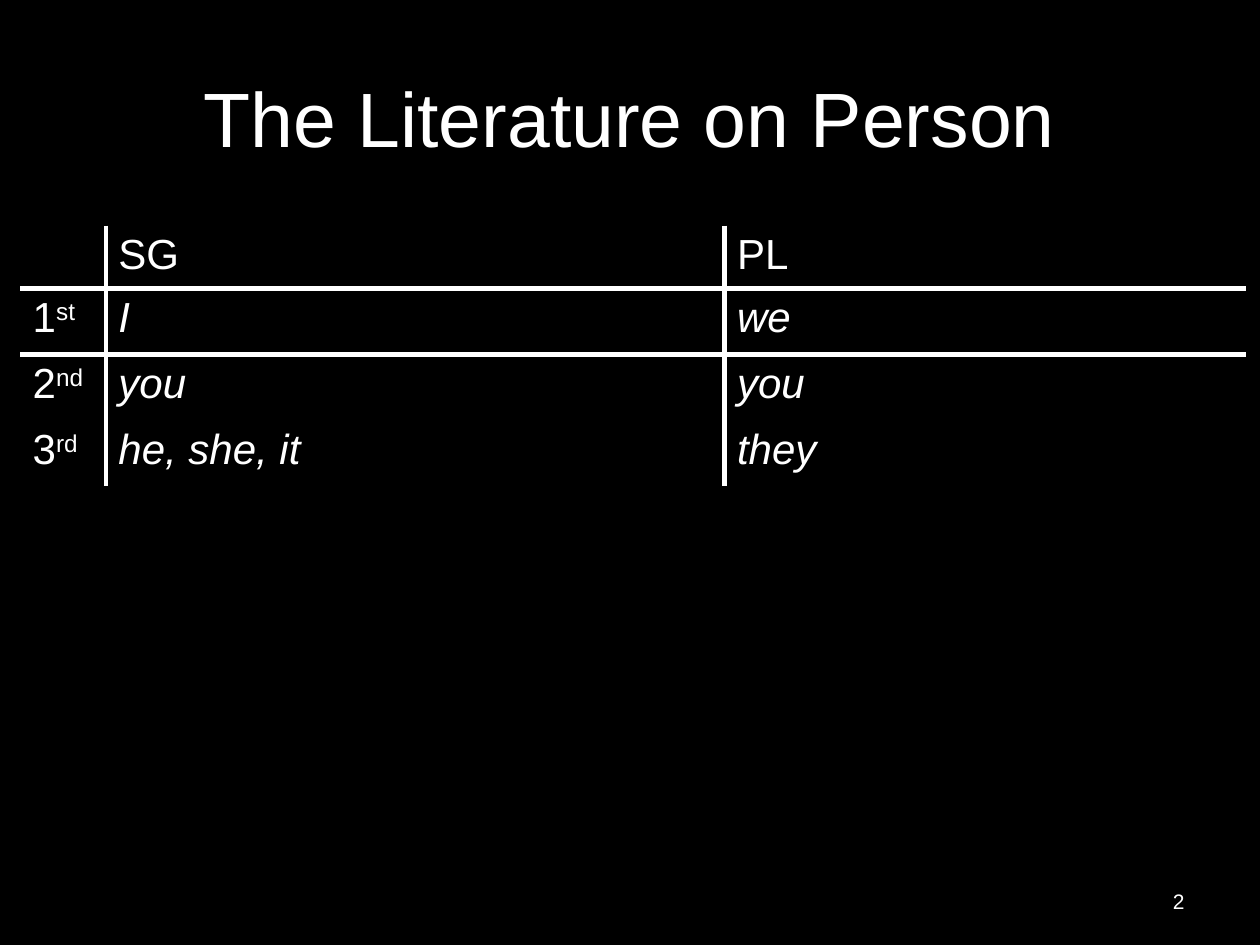
from dataclasses import dataclass

from lxml import etree
from pptx import Presentation
from pptx.dml.color import RGBColor
from pptx.enum.text import MSO_ANCHOR, PP_ALIGN
from pptx.oxml.ns import qn
from pptx.util import Pt

CENTER, RIGHT, MIDDLE = PP_ALIGN.CENTER, PP_ALIGN.RIGHT, MSO_ANCHOR.MIDDLE


@dataclass(frozen=True)
class Theme:
    font: str = "Arial"
    ink: str = "FFFFFF"
    paper: str = "000000"
    title: int = 44
    body: int = 24
    small: int = 12
    rule: int = 3


class Deck:
    def __init__(self, prs, theme):
        self.theme = theme
        self.s = prs.slides.add_slide(prs.slide_layouts[6])
        fill = self.s.background.fill
        fill.solid()
        fill.fore_color.rgb = RGBColor.from_string(theme.paper)

    def style(self, r, size, italic=False):
        r.font.name = self.theme.font
        r.font.size = Pt(size)
        r.font.italic = italic
        r.font.color.rgb = RGBColor.from_string(self.theme.ink)

    def text(self, text, box, size, align):
        tf = self.s.shapes.add_textbox(*map(Pt, box)).text_frame
        tf.word_wrap = True
        tf.vertical_anchor = MIDDLE
        tf.text = text
        p = tf.paragraphs[0]
        p.alignment = align
        self.style(p.runs[0], size)

    def border(self, cell, side, shown):
        ln = etree.SubElement(cell._tc.get_or_add_tcPr(), qn(f"a:ln{side}"))
        if shown:
            ln.set("w", str(Pt(self.theme.rule)))
            fill = etree.SubElement(ln, qn("a:solidFill"))
            etree.SubElement(fill, qn("a:srgbClr"), val=self.theme.ink)
        else:
            etree.SubElement(ln, qn("a:noFill"))

    def cell_text(self, cell, text, suffix="", italic=False):
        cell.text = text
        p = cell.text_frame.paragraphs[0]
        self.style(p.runs[0], self.theme.body, italic)
        if suffix:
            r = p.add_run()
            r.text = suffix
            self.style(r, self.theme.body)
            r.font._element.set("baseline", "30000")

    def table(self, left, top, widths, heights, v_rules, h_rules):
        """Add an unfilled table ruled after the given columns and rows."""
        table = self.s.shapes.add_table(
            len(heights), len(widths), Pt(left), Pt(top),
            Pt(sum(widths)), Pt(sum(heights))).table
        table.first_row = table.horz_banding = False
        for column, width in zip(table.columns, widths):
            column.width = Pt(width)
        for i, height in enumerate(heights):
            table.rows[i].height = Pt(height)
            for j in range(len(widths)):
                cell = table.cell(i, j)
                self.border(cell, "L", j - 1 in v_rules)
                self.border(cell, "R", j in v_rules)
                self.border(cell, "T", i - 1 in h_rules)
                self.border(cell, "B", i in h_rules)
                cell.fill.background()
        return table


def main():
    prs = Presentation()
    prs.slide_width, prs.slide_height = Pt(720), Pt(540)
    theme = Theme()
    deck = Deck(prs, theme)
    deck.text("The Literature on Person", (36, 21.6, 648, 90), theme.title, CENTER)
    deck.text("2", (516, 500.4, 168, 28.8), theme.small, RIGHT)

    sg, pl = 1, 4
    table = deck.table(
        11.5, 128.9, [49, 125.3, 121.7, 106.5, 78.5, 110.2, 109.4],
        [33.7, 37.7, 37.7, 37.7], v_rules=(0, pl - 1), h_rules=(0, 1))
    deck.cell_text(table.cell(0, sg), "SG")
    deck.cell_text(table.cell(0, pl), "PL")
    persons = [("1", "st", "I", "we"), ("2", "nd", "you", "you"),
               ("3", "rd", "he, she, it", "they")]
    for i, (number, suffix, singular, plural) in enumerate(persons, 1):
        deck.cell_text(table.cell(i, 0), number, suffix)
        deck.cell_text(table.cell(i, sg), singular, italic=True)
        deck.cell_text(table.cell(i, pl), plural, italic=True)
    prs.save("out.pptx")


if __name__ == "__main__":
    main()
